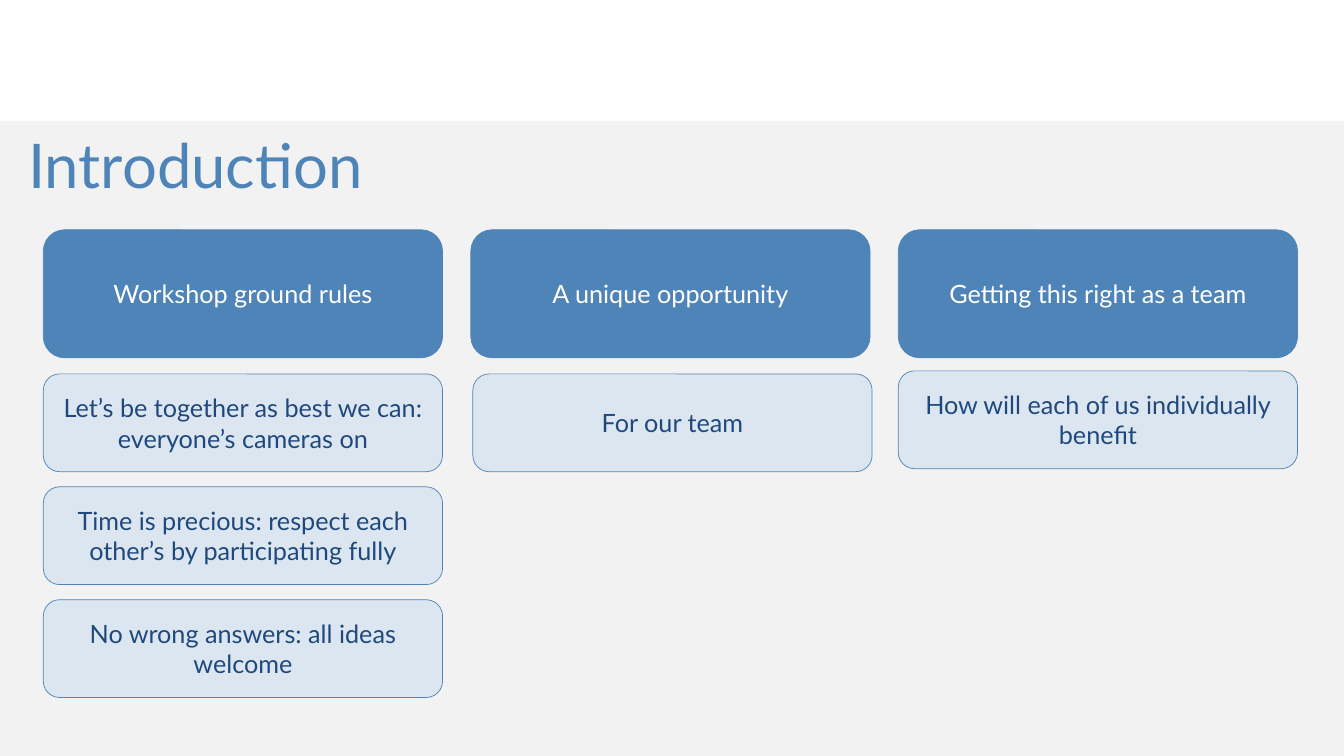
import pptx
import pptx.dml.color
import pptx.enum.shapes
import pptx.enum.text
import pptx.util
from pptx.util import Inches

TITLE = "Introduction"
# heading, (x, y) shift of the cards, card texts
COLUMNS = [
    ("Workshop ground rules", (0, 0), [
        "Let’s be together as best we can: everyone’s cameras on",
        "Time is precious: respect each other’s by participating fully",
        "No wrong answers: all ideas welcome",
    ]),
    ("A unique opportunity", (0.02, 0), ["For our team"]),
    ("Getting this right as a team", (0, -0.03),
     ["How will each of us individually benefit"]),
]

FONT = "Lato"
BLUE, NAVY, PALE, GREY, WHITE = "4E84B7", "1F497D", "DCE6F1", "F2F2F2", "FFFFFF"
SLIDE_W, SLIDE_H = 13.33, 7.5
PANEL_TOP = 1.2
LEFT, COLUMN_STEP, BOX_W = 0.43, 4.24, 3.96
HEADING_TOP, HEADING_H = 2.28, 1.27
CARD_TOP, CARD_STEP, CARD_H = 3.71, 1.12, 0.97

SHAPES = pptx.enum.shapes.MSO_SHAPE


def rgb(value):
    return pptx.dml.color.RGBColor.from_string(value)


def add_run(p, text, size, color):
    r = p.add_run()
    r.text = text
    r.font.name = FONT
    r.font.size = pptx.util.Pt(size)
    r.font.color.rgb = rgb(color)


def add_filled(s, kind, x, y, w, h, fill):
    sp = s.shapes.add_shape(kind, Inches(x), Inches(y), Inches(w), Inches(h))
    sp.shadow.inherit = False
    sp.fill.solid()
    sp.fill.fore_color.rgb = rgb(fill)
    sp.line.fill.background()
    return sp


def add_box(s, x, y, h, text, fill, color):
    """Add a rounded, outlined box with centred text."""
    sp = add_filled(s, SHAPES.ROUNDED_RECTANGLE, x, y, BOX_W, h, fill)
    sp.line.color.rgb = rgb(BLUE)
    sp.line.width = pptx.util.Pt(0.5)
    tf = sp.text_frame
    tf.word_wrap = True
    tf.vertical_anchor = pptx.enum.text.MSO_ANCHOR.MIDDLE
    p = tf.paragraphs[0]
    p.alignment = pptx.enum.text.PP_ALIGN.CENTER
    add_run(p, text, 18, color)


def main():
    prs = pptx.Presentation()
    prs.slide_width, prs.slide_height = Inches(SLIDE_W), Inches(SLIDE_H)
    s = prs.slides.add_slide(prs.slide_layouts[6])

    add_filled(s, SHAPES.RECTANGLE, 0, PANEL_TOP, SLIDE_W, SLIDE_H - PANEL_TOP, GREY)
    title = s.shapes.add_textbox(Inches(0.18), Inches(1.21), Inches(13.15), Inches(0.84))
    tf = title.text_frame
    tf.word_wrap = True
    add_run(tf.paragraphs[0], TITLE, 44, BLUE)

    for col, (heading, (dx, dy), cards) in enumerate(COLUMNS):
        x = LEFT + col * COLUMN_STEP
        add_box(s, x, HEADING_TOP, HEADING_H, heading, BLUE, WHITE)
        for row, text in enumerate(cards):
            y = CARD_TOP + row * CARD_STEP
            add_box(s, x + dx, y + dy, CARD_H, text, PALE, NAVY)

    prs.save("out.pptx")


if __name__ == "__main__":
    main()
